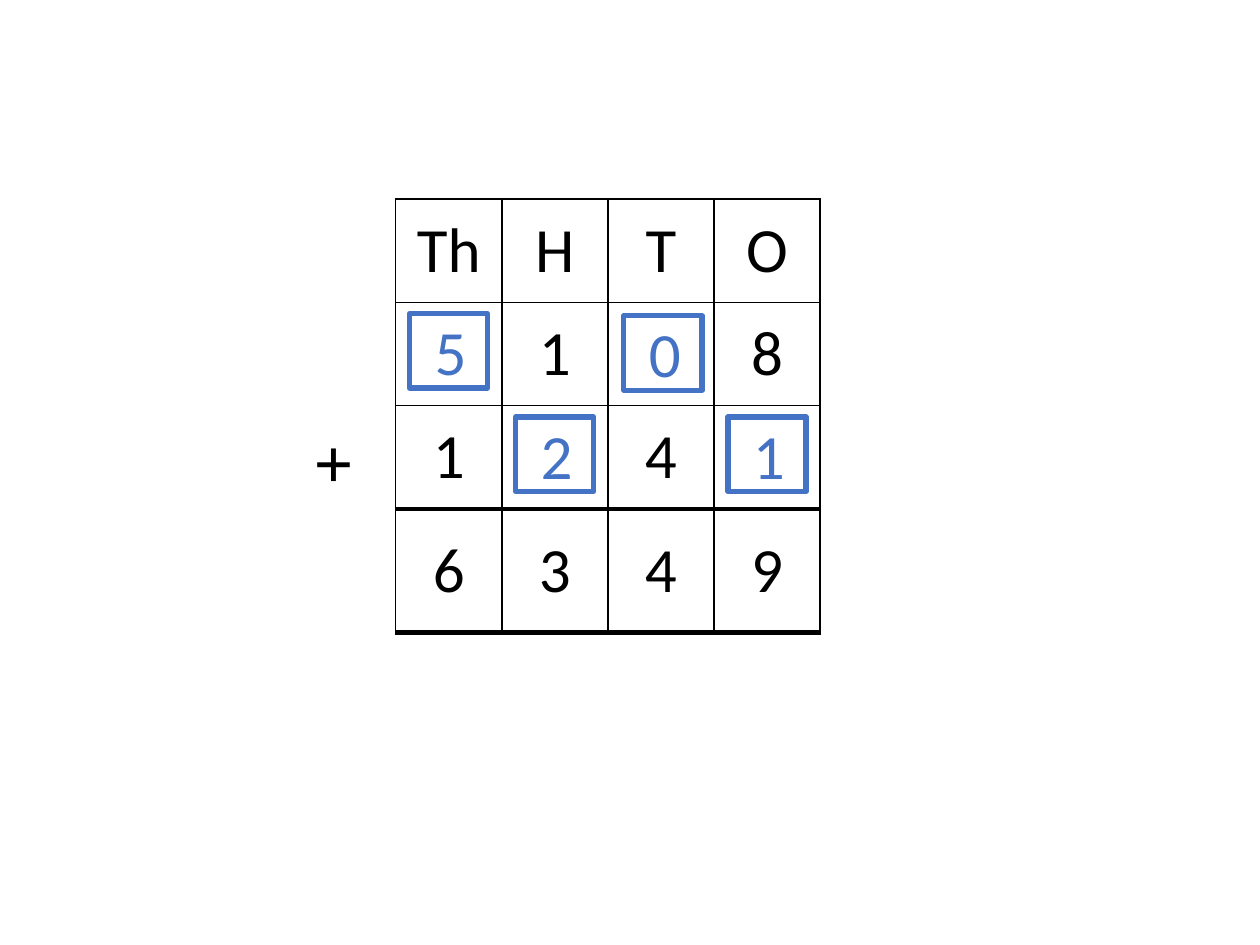
import dataclasses

import pptx
import pptx.dml.color
import pptx.enum.shapes
import pptx.enum.text
import pptx.oxml
import pptx.oxml.ns
import pptx.util


@dataclasses.dataclass(frozen=True)
class Theme:
    ink: str = "000000"
    answer: str = "4472C4"
    paper: str = "FFFFFF"
    digit_font: str = "Calibri"
    sign_font: str = "Times New Roman"
    digit_size: int = 36
    sign_size: int = 40
    thin: int = 1
    thick: int = 3


class PlaceValueSlide:
    """Draws a column addition on a grid of place-value columns and rows."""

    left, top = 3.14, 1.58
    column_width, row_height, total_height = 3.37 / 4, 0.82, 0.98

    def __init__(self, deck, theme):
        self.theme = theme
        self.slide = deck.slides.add_slide(deck.slide_layouts[6])

    def place(self, column, row, width, height):
        corner = (self.left + column * self.column_width, self.top + row * self.row_height)
        return [pptx.util.Inches(length) for length in (*corner, width, height)]

    def style(self, paragraph, color, font, size, bold=False):
        paragraph.font.name = font
        paragraph.font.size = pptx.util.Pt(size)
        paragraph.font.bold = bold
        paragraph.font.color.rgb = pptx.dml.color.RGBColor.from_string(color)

    def border(self, cell, side, width):
        cell._tc.get_or_add_tcPr().append(pptx.oxml.parse_xml(
            f'<a:ln{side} {pptx.oxml.ns.nsdecls("a")} w="{pptx.util.Pt(width)}">'
            f'<a:solidFill><a:srgbClr val="{self.theme.ink}"/></a:solidFill></a:ln{side}>'))

    def sum_table(self, rows):
        theme = self.theme
        last = len(rows) - 1
        height = last * self.row_height + self.total_height
        area = self.place(0, 0, len(rows[0]) * self.column_width, height)
        table = self.slide.shapes.add_table(len(rows), len(rows[0]), *area).table
        table.first_row = table.horz_banding = False
        for column in table.columns:
            column.width = pptx.util.Inches(self.column_width)
        for r, values in enumerate(rows):
            row_height = self.total_height if r == last else self.row_height
            table.rows[r].height = pptx.util.Inches(row_height)
            above = theme.thick if r == last else theme.thin
            below = theme.thick if r >= last - 1 else theme.thin
            for c, value in enumerate(values):
                cell = table.cell(r, c)
                for side, width in zip("LRTB", (theme.thin, theme.thin, above, below)):
                    self.border(cell, side, width)
                cell.fill.solid()
                cell.fill.fore_color.rgb = pptx.dml.color.RGBColor.from_string(theme.paper)
                cell.vertical_anchor = pptx.enum.text.MSO_ANCHOR.MIDDLE
                if value:
                    cell.text = value
                    paragraph = cell.text_frame.paragraphs[0]
                    paragraph.alignment = pptx.enum.text.PP_ALIGN.CENTER
                    self.style(paragraph, theme.ink, theme.digit_font, theme.digit_size)

    def label(self, text, area, *style, bold=False):
        frame = self.slide.shapes.add_textbox(*area).text_frame
        frame.word_wrap = True
        frame.auto_size = pptx.enum.text.MSO_AUTO_SIZE.SHAPE_TO_FIT_TEXT
        frame.text = text
        self.style(frame.paragraphs[0], *style, bold=bold)

    def plus_sign(self, column, row):
        theme = self.theme
        area = self.place(column, row, 0.7, 0.77)
        self.label("+", area, theme.ink, theme.sign_font, theme.sign_size, bold=True)

    def answer_box(self, digit, column, row):
        theme = self.theme
        area = self.place(column + 0.13, row + 0.11, 0.62, 0.59)
        box = self.slide.shapes.add_shape(pptx.enum.shapes.MSO_SHAPE.RECTANGLE, *area)
        box.shadow.inherit = False
        box.fill.background()
        box.line.color.rgb = pptx.dml.color.RGBColor.from_string(theme.answer)
        box.line.width = pptx.util.Pt(theme.thick)
        area = self.place(column + 0.25, row + 0.04, 0.46, 0.71)
        self.label(digit, area, theme.answer, theme.digit_font, theme.digit_size)


def main():
    deck = pptx.Presentation()
    deck.slide_width = pptx.util.Inches(10)
    deck.slide_height = pptx.util.Inches(7.5)
    addition = PlaceValueSlide(deck, Theme())
    addition.sum_table([
        ("Th", "H", "T", "O"),
        ("", "1", "", "8"),
        ("1", "", "4", ""),
        ("6", "3", "4", "9"),
    ])
    addition.plus_sign(-0.89, 2.06)
    for digit, column, row in (("5", 0, 1), ("0", 2.02, 1.02), ("2", 1, 2), ("1", 3, 2)):
        addition.answer_box(digit, column, row)
    deck.save("out.pptx")


if __name__ == "__main__":
    main()
